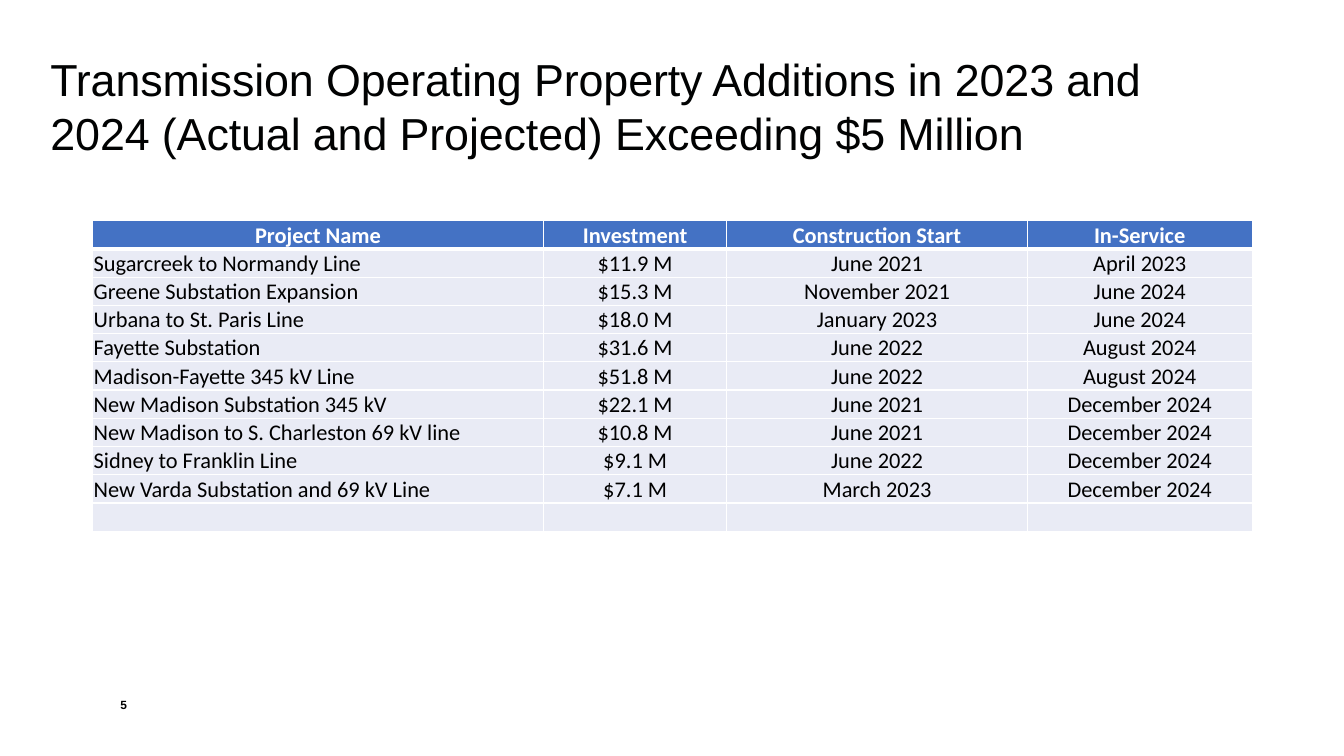
from lxml import etree
from pptx import Presentation
from pptx import util as u
from pptx.dml.color import RGBColor
from pptx.enum import text
from pptx.oxml import ns

WIDTH, HEIGHT = u.Inches(13.33), u.Inches(7.5)
COLORS = {"title": "010202", "ink": "000000", "paper": "FFFFFF",
          "header": "4472C4", "body": "E9EBF5"}
COLUMN_WIDTHS = [4.47, 1.82, 2.98, 2.23]
ROW_HEIGHT = 0.28
HEADINGS = ["Project Name", "Investment", "Construction Start", "In-Service"]
PROJECTS = [
    ["Sugarcreek to Normandy Line", "$11.9 M", "June 2021", "April 2023"],
    ["Greene Substation Expansion", "$15.3 M", "November 2021", "June 2024"],
    ["Urbana to St. Paris Line", "$18.0 M", "January 2023", "June 2024"],
    ["Fayette Substation", "$31.6 M", "June 2022", "August 2024"],
    ["Madison-Fayette 345 kV Line", "$51.8 M", "June 2022", "August 2024"],
    ["New Madison Substation 345 kV", "$22.1 M", "June 2021", "December 2024"],
    ["New Madison to S. Charleston 69 kV line", "$10.8 M", "June 2021", "December 2024"],
    ["Sidney to Franklin Line", "$9.1 M", "June 2022", "December 2024"],
    ["New Varda Substation and 69 kV Line", "$7.1 M", "March 2023", "December 2024"],
    [""] * len(HEADINGS),
]


def color(name):
    """Return the named palette colour."""
    return RGBColor.from_string(COLORS[name])


def place(element, left, top, width, height):
    """Position an element by shares of the slide's size."""
    element.left, element.width = round(WIDTH * left), round(WIDTH * width)
    element.top, element.height = round(HEIGHT * top), round(HEIGHT * height)


def write(paragraph, words, size, face, ink, bold=False, align=text.PP_ALIGN.LEFT):
    """Add one formatted run to an aligned paragraph and return it."""
    paragraph.alignment = align
    run = paragraph.add_run()
    run.text = words
    run.font.size, run.font.name, run.font.bold = u.Pt(size), face, bold
    run.font.color.rgb = color(ink)
    return run


def add_heading(slide):
    """Fill the title placeholder."""
    heading = slide.shapes.title
    place(heading, 0.03, 0.061, 0.86, 0.158)
    heading.text_frame.word_wrap = True
    heading.text_frame.vertical_anchor = text.MSO_ANCHOR.MIDDLE
    run = write(heading.text_frame.paragraphs[0],
                "Transmission Operating Property Additions in 2023 and 2024 "
                "(Actual and Projected) Exceeding $5 Million", 32, "Arial", "title")
    run.font._element.set("spc", "-10")


def add_page_number(slide, number):
    """Put the page number at the lower left."""
    page = slide.shapes.add_textbox(0, 0, 0, 0)
    place(page, 0.03, 0.923, 0.0645, 0.019)
    frame = page.text_frame
    frame.word_wrap = True
    frame.vertical_anchor = text.MSO_ANCHOR.BOTTOM
    frame.margin_left = frame.margin_right = frame.margin_top = frame.margin_bottom = 0
    write(frame.paragraphs[0], number, 8.5, "Arial", "ink", True, text.PP_ALIGN.RIGHT)


def add_borders(cell, top, bottom):
    """Draw white cell borders with the given top and bottom widths in points."""
    properties = cell._tc.get_or_add_tcPr()
    for side, points in (("L", 1), ("R", 1), ("T", top), ("B", bottom)):
        line = etree.SubElement(properties, ns.qn(f"a:ln{side}"), w=str(u.Pt(points)))
        fill = etree.SubElement(line, ns.qn("a:solidFill"))
        etree.SubElement(fill, ns.qn("a:srgbClr"), val=COLORS["paper"])


def fill_cell(cell, words, row, column):
    """Format one table cell by its row and column."""
    header = row == 0
    add_borders(cell, 3 if row == 1 else 1, 3 if header else 1)
    cell.fill.solid()
    cell.fill.fore_color.rgb = color("header" if header else "body")
    cell.margin_left = cell.margin_right = cell.margin_top = u.Inches(0.01)
    cell.margin_bottom = 0
    cell.vertical_anchor = text.MSO_ANCHOR.BOTTOM if header else text.MSO_ANCHOR.MIDDLE
    paragraph = cell.text_frame.paragraphs[0]
    if words:
        centred = header or column > 0
        write(paragraph, words, 16, "Calibri", "paper" if header else "ink", header,
              text.PP_ALIGN.CENTER if centred else text.PP_ALIGN.LEFT)
    else:
        etree.SubElement(paragraph._p, ns.qn("a:endParaRPr"), sz="1600")


def add_projects(slide):
    """Build the table of projects."""
    rows = [HEADINGS] + PROJECTS
    table = slide.shapes.add_table(
        len(rows), len(HEADINGS), round(WIDTH * 0.069), round(HEIGHT * 0.292),
        u.Inches(sum(COLUMN_WIDTHS)), u.Inches(ROW_HEIGHT * len(rows))).table
    table.horz_banding = False
    for column, width in zip(table.columns, COLUMN_WIDTHS):
        column.width = u.Inches(width)
    for row, entries in enumerate(rows):
        for column, words in enumerate(entries):
            fill_cell(table.cell(row, column), words, row, column)


def main():
    """Build and save the slide."""
    deck = Presentation()
    deck.slide_width, deck.slide_height = WIDTH, HEIGHT
    slide = deck.slides.add_slide(deck.slide_layouts.get_by_name("Title Only"))
    add_heading(slide)
    add_page_number(slide, "5")
    add_projects(slide)
    deck.save("out.pptx")


if __name__ == "__main__":
    main()
